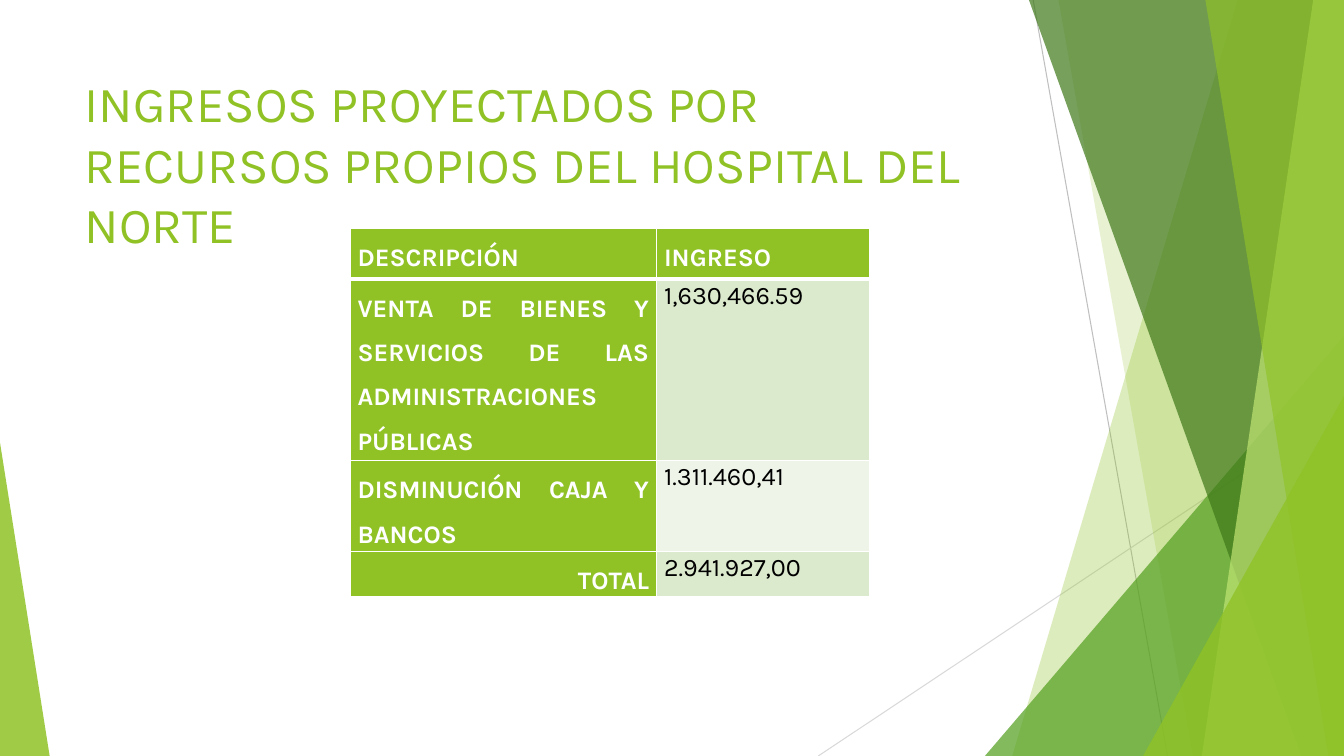
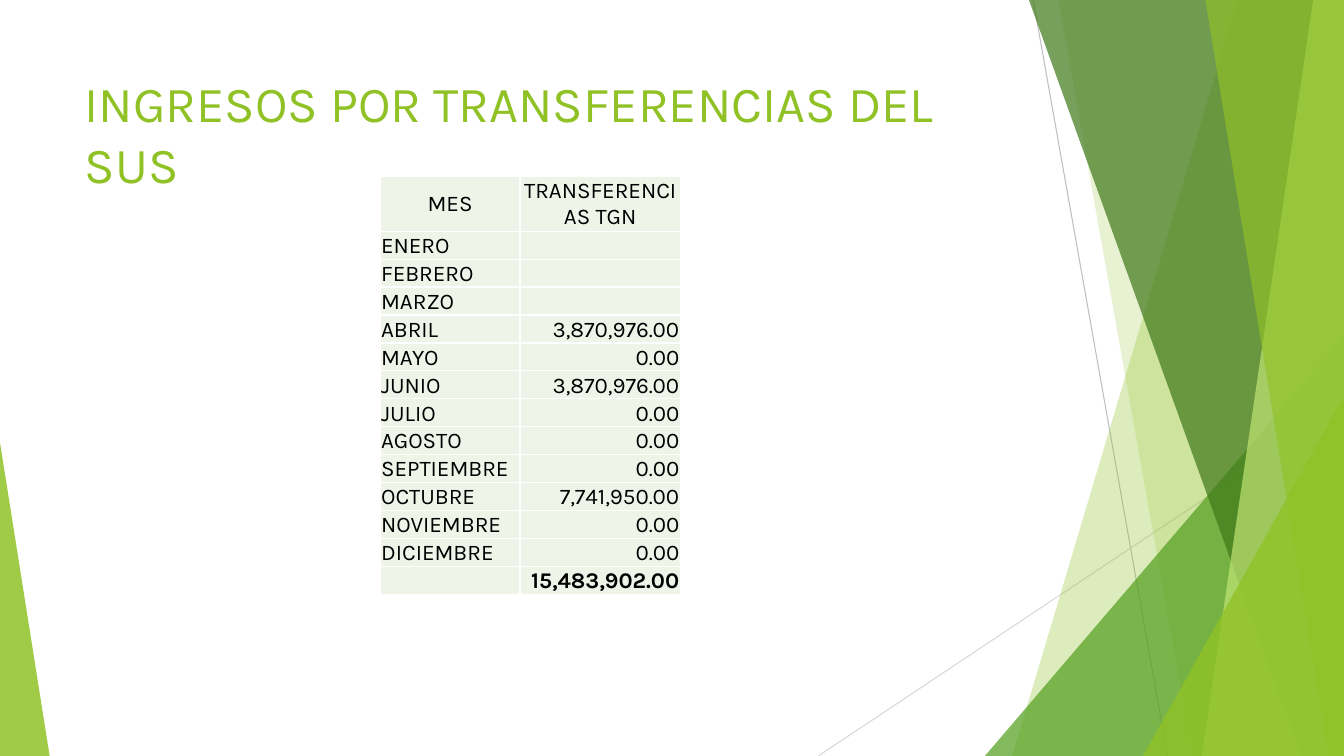
import dataclasses

import lxml.etree
import pptx
import pptx.dml.color
import pptx.enum.shapes
import pptx.enum.text
import pptx.oxml.ns
import pptx.util

Pt = pptx.util.Pt
ALIGN = pptx.enum.text.PP_ALIGN
ANCHOR = pptx.enum.text.MSO_ANCHOR


@dataclasses.dataclass(frozen=True)
class Theme:
    width: int = 960
    height: int = 540
    font: str = "Karla"
    title_size: int = 36
    income_size: int = 18
    month_size: int = 16
    lime: str = "90C226"
    green: str = "54A021"
    forest: str = "3F7819"
    pale_lime: str = "C0E474"
    tint: str = "DBE9CD"
    light_tint: str = "EEF4E8"
    white: str = "FFFFFF"
    black: str = "000000"
    grey: str = "BFBFBF"
    light_grey: str = "D9D9D9"


THEME = Theme()


@dataclasses.dataclass(frozen=True)
class CellStyle:
    fill: str
    size: int
    color: str = THEME.black
    bold: bool = False
    align: ALIGN = ALIGN.LEFT
    anchor: ANCHOR = ANCHOR.TOP
    line_spacing: float = 1.0
    margins: tuple = (5.4, 0, 5.4, 0)  # left, top, right, bottom
    top_border: float = 1
    bottom_border: float = 1


def rgb(color):
    return pptx.dml.color.RGBColor.from_string(color)


def add_xml(parent, tag, **attributes):
    return lxml.etree.SubElement(parent, pptx.oxml.ns.qn(tag), **attributes)


# Background decoration
def add_hairline(page, start, end, color):
    line = page.shapes.add_connector(
        pptx.enum.shapes.MSO_CONNECTOR.STRAIGHT, *map(Pt, start + end))
    line.line.color.rgb = rgb(color)
    line.line.width = Pt(0.75)
    add_xml(line.element.spPr, "a:effectLst")


def paint(shape, color, opacity):
    shape.shadow.inherit = False
    shape.line.fill.background()
    shape.fill.solid()
    shape.fill.fore_color.rgb = rgb(color)
    color_node = shape.element.spPr.find(".//" + pptx.oxml.ns.qn("a:srgbClr"))
    add_xml(color_node, "a:alpha", val=str(opacity * 1000))


def add_band(page, top_x, bottom_x, color, opacity):
    """Full-height band from a slanted left side to the right slide edge."""
    right, bottom = Pt(THEME.width), Pt(THEME.height)
    outline = page.shapes.build_freeform(Pt(top_x), 0)
    outline.add_line_segments(
        [(right, 0), (right, bottom), (Pt(bottom_x), bottom)], close=True)
    paint(outline.convert_to_shape(), color, opacity)


def add_corner(page, left, top, width, apex, color, opacity):
    """Triangle standing on the bottom edge; apex 0 is left, 1 is right."""
    corner = page.shapes.add_shape(
        pptx.enum.shapes.MSO_SHAPE.ISOSCELES_TRIANGLE,
        Pt(left), Pt(top), Pt(width), Pt(THEME.height - top))
    corner.adjustments[0] = apex
    paint(corner, color, opacity)


def add_decoration(page):
    add_hairline(page, (738, 0), (834, 540), THEME.grey)
    add_hairline(page, (960, 290), (584.5, 540), THEME.light_grey)
    add_band(page, 884, 723, THEME.lime, 30)
    add_band(page, 756, 852, THEME.lime, 20)
    add_corner(page, 703.5, 240, 256.5, 1, THEME.green, 72)
    add_band(page, 735, 929.5, THEME.forest, 70)
    add_band(page, 938, 858.5, THEME.pale_lime, 70)
    add_band(page, 861, 949, THEME.lime, 65)
    add_corner(page, 816.5, 283, 143.5, 1, THEME.lime, 80)
    add_corner(page, 0, 316, 35.5, 0, THEME.lime, 85)


# Text
def format_run(run, size, color, bold=False):
    run.font.name = THEME.font
    run.font.size = Pt(size)
    run.font.bold = bold
    run.font.color.rgb = rgb(color)


def add_title(page, text):
    box = page.shapes.add_textbox(Pt(53.5), Pt(48), Pt(677), Pt(104))
    box.text_frame.word_wrap = True
    box.text_frame.text = text
    format_run(box.text_frame.paragraphs[0].runs[0],
               THEME.title_size, THEME.lime)


# Tables
def add_borders(cell, style):
    properties = cell._tc.get_or_add_tcPr()
    widths = {"L": 1, "R": 1, "T": style.top_border, "B": style.bottom_border}
    for side, width in widths.items():
        border = add_xml(properties, "a:ln" + side, w=str(Pt(width)))
        add_xml(add_xml(border, "a:solidFill"), "a:srgbClr", val=THEME.white)


def write_cell(cell, text, style):
    add_borders(cell, style)
    cell.fill.solid()
    cell.fill.fore_color.rgb = rgb(style.fill)
    cell.vertical_anchor = style.anchor
    (cell.margin_left, cell.margin_top,
     cell.margin_right, cell.margin_bottom) = map(Pt, style.margins)
    para = cell.text_frame.paragraphs[0]
    para.text = text
    para.alignment = style.align
    para.line_spacing = style.line_spacing
    for run in para.runs:
        format_run(run, style.size, style.color, style.bold)
    if not text:
        # An empty cell needs its own size, or its row grows
        mark = add_xml(para._p, "a:endParaRPr", sz=str(style.size * 100))
        add_xml(mark, "a:latin", typeface=THEME.font)


def add_grid(page, left, top, widths, heights, rows, style_of):
    """Table whose cell styles come from style_of(row, column)."""
    frame = page.shapes.add_table(
        len(rows), len(widths), Pt(left), Pt(top),
        Pt(sum(widths)), Pt(sum(heights)))
    table = frame.table
    table.first_row = table.horz_banding = False
    for column, width in zip(table.columns, widths):
        column.width = Pt(width)
    for row, height in zip(table.rows, heights):
        row.height = Pt(height)
    for row_index, texts in enumerate(rows):
        for column_index, text in enumerate(texts):
            write_cell(table.cell(row_index, column_index), text,
                       style_of(row_index, column_index))


# Slides
def new_page(deck, title):
    page = deck.slides.add_slide(deck.slide_layouts[6])
    add_decoration(page)
    add_title(page, title)
    return page


def add_income_page(deck):
    page = new_page(
        deck, "INGRESOS PROYECTADOS POR RECURSOS PROPIOS DEL HOSPITAL DEL NORTE")
    rows = [
        ("DESCRIPCIÓN", "INGRESO"),
        ("VENTA DE BIENES Y SERVICIOS DE LAS ADMINISTRACIONES PÚBLICAS",
         "1,630,466.59"),
        ("DISMINUCIÓN CAJA Y BANCOS", "1.311.460,41"),
        ("TOTAL", "2.941.927,00"),
    ]
    label = CellStyle(THEME.lime, THEME.income_size, THEME.white, bold=True,
                      align=ALIGN.JUSTIFY, line_spacing=1.5)
    amount = CellStyle(THEME.tint, THEME.income_size,
                       align=ALIGN.JUSTIFY, line_spacing=1.07)

    def style_of(row, column):
        if row == 0:
            return dataclasses.replace(label, bottom_border=3)
        style = label if column == 0 else amount
        if row == 1:
            return dataclasses.replace(style, top_border=3)
        if column == 1 and row % 2 == 0:
            return dataclasses.replace(style, fill=THEME.light_tint)
        if column == 0 and row == len(rows) - 1:
            return dataclasses.replace(style, align=ALIGN.RIGHT)
        return style

    add_grid(page, 250, 163, (219, 152), (36.5, 61, 46, 21.5), rows, style_of)


def add_transfer_page(deck):
    page = new_page(deck, "INGRESOS POR TRANSFERENCIAS DEL SUS")
    rows = [
        ("MES", "TRANSFERENCIAS TGN"),
        ("ENERO", ""),
        ("FEBRERO", ""),
        ("MARZO", ""),
        ("ABRIL", "3,870,976.00"),
        ("MAYO", "0.00"),
        ("JUNIO", "3,870,976.00"),
        ("JULIO", "0.00"),
        ("AGOSTO", "0.00"),
        ("SEPTIEMBRE", "0.00"),
        ("OCTUBRE", "7,741,950.00"),
        ("NOVIEMBRE", "0.00"),
        ("DICIEMBRE", "0.00"),
        ("", "15,483,902.00"),
    ]
    month = CellStyle(THEME.light_tint, THEME.month_size,
                      anchor=ANCHOR.BOTTOM, margins=(0.75, 0.75, 0.75, 0))
    header = dataclasses.replace(month, align=ALIGN.CENTER,
                                 anchor=ANCHOR.MIDDLE)
    amount = dataclasses.replace(month, align=ALIGN.RIGHT)
    total = dataclasses.replace(amount, bold=True)

    def style_of(row, column):
        if row == 0:
            return header
        if column == 0:
            return month
        return total if row == len(rows) - 1 else amount

    heights = [35.5] + [17.5] * (len(rows) - 1)
    add_grid(page, 271.5, 126, (100, 114.5), heights, rows, style_of)


def main():
    deck = pptx.Presentation()
    deck.slide_width = Pt(THEME.width)
    deck.slide_height = Pt(THEME.height)
    add_income_page(deck)
    add_transfer_page(deck)
    deck.save("out.pptx")


if __name__ == "__main__":
    main()
